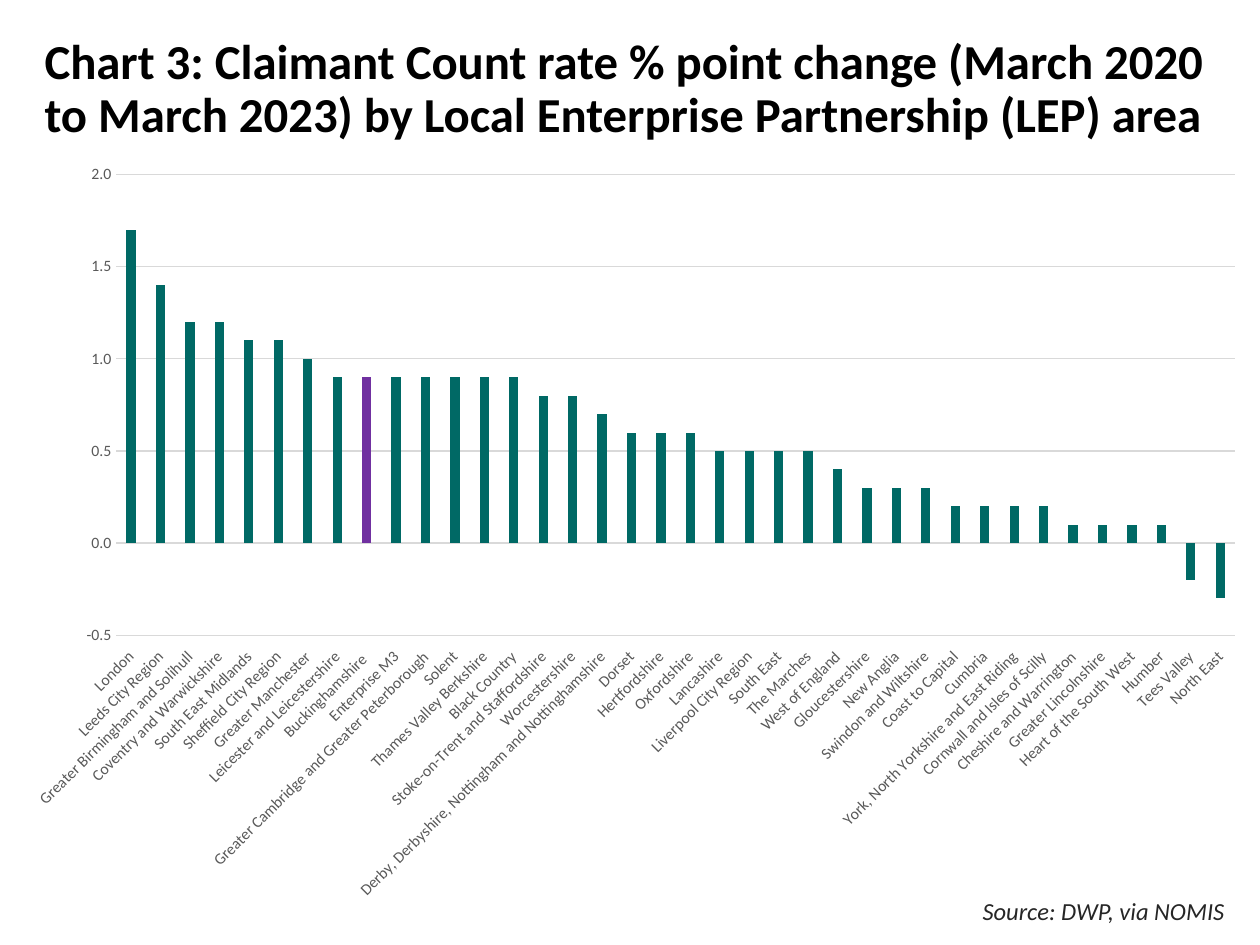
import dataclasses

import pptx
import pptx.chart.data
import pptx.dml.color
import pptx.enum.chart
import pptx.enum.text
import pptx.oxml.ns
import pptx.util

PX = 914400 / 126


@dataclasses.dataclass(frozen=True)
class Theme:
    font: str = "Calibri"
    title_color: str = "000000"
    source_color: str = "262626"
    label_color: str = "595959"
    grid_color: str = "D9D9D9"
    bar_color: str = "006965"
    highlight_color: str = "7030A0"
    title_size: float = 27.9
    source_size: float = 14
    chart_size: float = 10
    label_size: float = 9
    line_width: float = 0.75


THEME = Theme()
HIGHLIGHT = "Buckinghamshire "
RATES = [
    ("London", 1.7),
    ("Leeds City Region", 1.4),
    ("Greater Birmingham and Solihull", 1.2),
    ("Coventry and Warwickshire", 1.2),
    ("South East Midlands", 1.1),
    ("Sheffield City Region", 1.1),
    ("Greater Manchester", 1.0),
    ("Leicester and Leicestershire", 0.9),
    (HIGHLIGHT, 0.9),
    ("Enterprise M3", 0.9),
    ("Greater Cambridge and Greater Peterborough", 0.9),
    ("Solent", 0.9),
    ("Thames Valley Berkshire", 0.9),
    ("Black Country", 0.9),
    ("Stoke-on-Trent and Staffordshire", 0.8),
    ("Worcestershire", 0.8),
    ("Derby, Derbyshire, Nottingham and Nottinghamshire", 0.7),
    ("Dorset", 0.6),
    ("Hertfordshire", 0.6),
    ("Oxfordshire", 0.6),
    ("Lancashire", 0.5),
    ("Liverpool City Region", 0.5),
    ("South East", 0.5),
    ("The Marches", 0.5),
    ("West of England", 0.4),
    ("Gloucestershire", 0.3),
    ("New Anglia", 0.3),
    ("Swindon and Wiltshire", 0.3),
    ("Coast to Capital", 0.2),
    ("Cumbria", 0.2),
    ("York, North Yorkshire and East Riding", 0.2),
    ("Cornwall and Isles of Scilly", 0.2),
    ("Cheshire and Warrington", 0.1),
    ("Greater Lincolnshire", 0.1),
    ("Heart of the South West", 0.1),
    ("Humber", 0.1),
    ("Tees Valley", -0.2),
    ("North East", -0.3),
]


def px(n):
    return pptx.util.Emu(round(n * PX))


def rgb(value):
    return pptx.dml.color.RGBColor.from_string(value)


def style_font(font, size, color, bold=False, italic=False):
    font.name = THEME.font
    font.size = pptx.util.Pt(size)
    font.color.rgb = rgb(color)
    font.bold = bold
    font.italic = italic


def style_line(line):
    line.color.rgb = rgb(THEME.grid_color)
    line.width = pptx.util.Pt(THEME.line_width)


def fill_bar(fmt, color):
    fmt.fill.solid()
    fmt.fill.fore_color.rgb = rgb(color)


def place_title(s, x, y, w, h):
    sp = s.shapes.title
    sp.left, sp.top, sp.width, sp.height = map(px, (x, y, w, h))
    tf = sp.text_frame
    tf.word_wrap = True
    tf.auto_size = pptx.enum.text.MSO_AUTO_SIZE.NONE
    tf.vertical_anchor = pptx.enum.text.MSO_ANCHOR.MIDDLE
    p = tf.paragraphs[0]
    p.alignment = pptx.enum.text.PP_ALIGN.LEFT
    p.line_spacing = 0.9
    r = p.add_run()
    r.text = ("Chart 3: Claimant Count rate % point change (March 2020 to March 2023) "
              "by Local Enterprise Partnership (LEP) area")
    style_font(r.font, THEME.title_size, THEME.title_color, bold=True)


def place_source(s, x, y, w, h):
    tf = s.shapes.add_textbox(*map(px, (x, y, w, h))).text_frame
    tf.word_wrap = True
    tf.auto_size = pptx.enum.text.MSO_AUTO_SIZE.SHAPE_TO_FIT_TEXT
    p = tf.paragraphs[0]
    p.alignment = pptx.enum.text.PP_ALIGN.RIGHT
    r = p.add_run()
    r.text = "Source: DWP, via NOMIS"
    style_font(r.font, THEME.source_size, THEME.source_color, italic=True)


def style_axes(chart):
    cat, val = chart.category_axis, chart.value_axis
    for axis in (cat, val):
        axis.major_tick_mark = pptx.enum.chart.XL_TICK_MARK.NONE
        axis.minor_tick_mark = pptx.enum.chart.XL_TICK_MARK.NONE
        style_font(axis.tick_labels.font, THEME.label_size, THEME.label_color)
    cat.tick_label_position = pptx.enum.chart.XL_TICK_LABEL_POSITION.LOW
    cat._element.find(".//" + pptx.oxml.ns.qn("a:bodyPr")).set("rot", "-2700000")
    style_line(cat.format.line)
    val.minimum_scale, val.maximum_scale, val.major_unit = -0.5, 2, 0.5
    val.tick_labels.number_format = "#,##0.0"
    val.tick_labels.number_format_is_linked = False
    val.format.line.fill.background()
    style_line(val.major_gridlines.format.line)


def place_chart(s, x, y, w, h):
    areas, rates = zip(*RATES)
    data = pptx.chart.data.CategoryChartData(number_format="0.0")
    data.categories = areas
    data.add_series("Series 1", rates)
    kind = pptx.enum.chart.XL_CHART_TYPE.COLUMN_CLUSTERED
    chart = s.shapes.add_chart(kind, *map(px, (x, y, w, h)), data).chart
    chart.has_title = False
    chart.has_legend = False
    style_font(chart.font, THEME.chart_size, THEME.title_color)
    plot = chart.plots[0]
    plot.vary_by_categories = False
    plot.gap_width = 219
    plot.overlap = -27
    bars = plot.series[0]
    bars.invert_if_negative = False
    fill_bar(bars.format, THEME.bar_color)
    fill_bar(bars.points[areas.index(HIGHLIGHT)].format, THEME.highlight_color)
    style_axes(chart)


def main():
    prs = pptx.Presentation()
    prs.slide_width, prs.slide_height = px(1260), px(945)
    s = prs.slides.add_slide(prs.slide_layouts.get_by_name("Title Only"))
    place_title(s, 32, 26, 1195, 128)
    place_source(s, 937, 890, 300, 43)
    place_chart(s, 11, 150, 1249, 765)
    prs.save("out.pptx")


if __name__ == "__main__":
    main()
